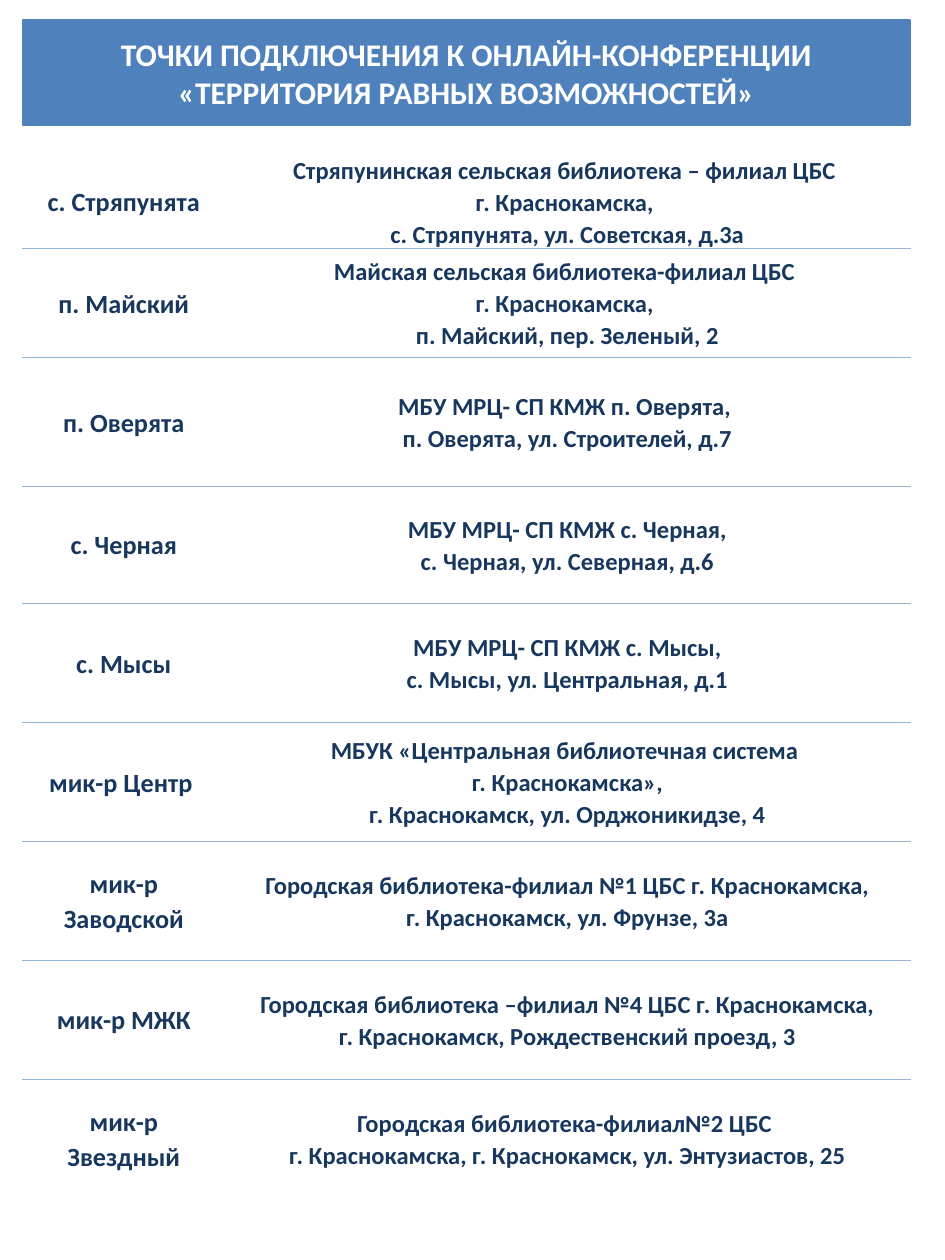
from dataclasses import dataclass

from lxml import etree
from pptx import Presentation
from pptx.dml.color import RGBColor
from pptx.enum.text import MSO_ANCHOR, MSO_AUTO_SIZE, PP_ALIGN
from pptx.oxml.ns import qn
from pptx.util import Pt

CENTER = PP_ALIGN.CENTER
MIDDLE = MSO_ANCHOR.MIDDLE
GROW = MSO_AUTO_SIZE.SHAPE_TO_FIT_TEXT


@dataclass(frozen=True)
class Theme:
    font: str = "Calibri"
    white: str = "FFFFFF"
    blue: str = "4F81BD"
    rule: str = "95B3D7"
    navy: str = "17375E"
    alpha: int = 54
    head: float = 18
    place: float = 15
    venue: float = 14


THEME = Theme()
LEFT, WIDTH = 13, 507
COLS = [115.5, 391.5]
ROWS = [51, 62.5, 73.5, 67] + [68] * 5

TITLE = "ТОЧКИ ПОДКЛЮЧЕНИЯ К ОНЛАЙН-КОНФЕРЕНЦИИ «ТЕРРИТОРИЯ РАВНЫХ ВОЗМОЖНОСТЕЙ»"
POINTS = [
    ("с. Стряпунята", ["Стряпунинская сельская библиотека – филиал ЦБС ",
                       "г. Краснокамска, ",
                       "с. Стряпунята, ул. Советская, д.3а"]),
    ("п. Майский", ["Майская сельская библиотека-филиал ЦБС ",
                    "г. Краснокамска, ",
                    "п. Майский, пер. Зеленый, 2"]),
    ("п. Оверята", ["МБУ МРЦ- СП КМЖ п. Оверята, ",
                    "п. Оверята, ул. Строителей, д.7"]),
    ("с. Черная", ["МБУ МРЦ- СП КМЖ с. Черная,",
                   "с. Черная, ул. Северная, д.6"]),
    ("с. Мысы", ["МБУ МРЦ- СП КМЖ с. Мысы,",
                 "с. Мысы, ул. Центральная, д.1"]),
    ("мик-р Центр ", ["МБУК «Центральная библиотечная система ",
                      "г. Краснокамска»,",
                      "г. Краснокамск, ул. Орджоникидзе, 4"]),
    ("мик-р Заводской", ["Городская библиотека-филиал №1 ЦБС г. Краснокамска,",
                         "г. Краснокамск, ул. Фрунзе, 3а"]),
    ("мик-р МЖК", ["Городская библиотека –филиал №4 ЦБС г. Краснокамска,",
                   "г. Краснокамск, Рождественский проезд, 3"]),
    ("мик-р Звездный", ["Городская библиотека-филиал№2 ЦБС ",
                        "г. Краснокамска, г. Краснокамск, ул. Энтузиастов, 25"]),
]


def apply(item, values):
    for name, value in values.items():
        setattr(item, name, value)


def paint(fill, color):
    fill.solid()
    fill.fore_color.rgb = RGBColor.from_string(color)


def fade(root):
    """Make every colour below root partly transparent."""
    for color in root.iter(qn("a:srgbClr")):
        etree.SubElement(color, qn("a:alpha"), val=str(THEME.alpha * 1000))


def write(frame, lines, size, color, space):
    frame.text = "\n".join(lines)
    for para in frame.paragraphs:
        apply(para, {"alignment": CENTER, "line_spacing": space})
        font = para.runs[0].font
        apply(font, {"name": THEME.font, "size": Pt(size), "bold": True})
        font.color.rgb = RGBColor.from_string(color)


def edge(cell, top, base):
    """Draw the four cell borders, which come before the fill in the XML."""
    props = cell._tc.get_or_add_tcPr()
    sides = {"lnL": THEME.white, "lnR": THEME.white, "lnT": top, "lnB": base}
    for place, (side, color) in enumerate(sides.items()):
        line = etree.Element(qn(f"a:{side}"), w=str(Pt(1)))
        fill = etree.SubElement(line, qn("a:solidFill"))
        etree.SubElement(fill, qn("a:srgbClr"), val=color)
        props.insert(place, line)


def add_title(slide):
    title = slide.shapes.title
    apply(title, {"left": Pt(LEFT), "top": Pt(16),
                  "width": Pt(WIDTH), "height": Pt(51)})
    paint(title.fill, THEME.blue)
    paint(title.line.fill, THEME.blue)
    title.line.width = Pt(0.75)
    write(title.text_frame, [TITLE], THEME.head, THEME.white, 1.0)
    apply(title.text_frame, {"word_wrap": True, "auto_size": GROW})


def add_cell(cell, lines, size, top, base):
    apply(cell, {"vertical_anchor": MIDDLE, "margin_left": Pt(5),
                 "margin_right": Pt(5), "margin_top": 0, "margin_bottom": 0})
    write(cell.text_frame, lines, size, THEME.navy, 1.07)
    paint(cell.fill, THEME.white)
    fade(cell._tc)
    # Text stays opaque: only the fill keeps its transparency
    for run in cell._tc.iter(qn("a:rPr")):
        for alpha in list(run.iter(qn("a:alpha"))):
            alpha.getparent().remove(alpha)
    edge(cell, top, base)


def add_points(slide):
    table = slide.shapes.add_table(
        len(POINTS), len(COLS), Pt(LEFT), Pt(88), Pt(WIDTH), Pt(sum(ROWS))).table
    apply(table, {"first_row": False, "horz_banding": False})
    for col, width in zip(table.columns, COLS):
        col.width = Pt(width)
    last = len(POINTS) - 1
    for row, (place, venue) in enumerate(POINTS):
        table.rows[row].height = Pt(ROWS[row])
        top = THEME.rule if row else THEME.white
        base = THEME.rule if row < last else THEME.white
        add_cell(table.cell(row, 0), [place], THEME.place, top, base)
        add_cell(table.cell(row, 1), venue, THEME.venue, top, base)


def main():
    deck = Presentation()
    apply(deck, {"slide_width": Pt(540), "slide_height": Pt(720)})
    slide = deck.slides.add_slide(deck.slide_layouts[5])

    # Background
    paint(slide.background.fill, THEME.white)
    fade(slide.element)

    # Heading and list of places
    add_title(slide)
    add_points(slide)
    deck.save("out.pptx")


if __name__ == "__main__":
    main()
